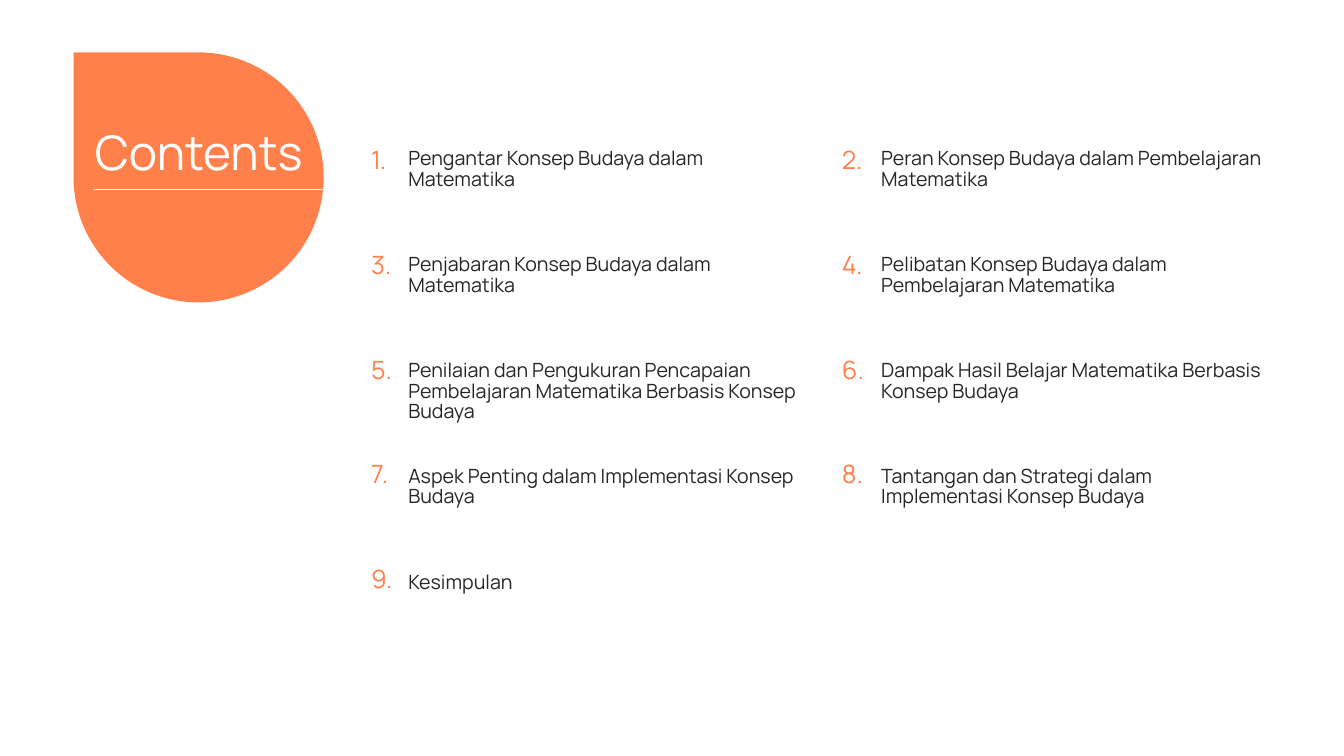
"""Build the contents slide with its nine numbered topics in two columns."""
import dataclasses

import lxml.etree
import pptx
import pptx.dml.color
import pptx.enum.shapes
import pptx.enum.text
import pptx.oxml.ns
import pptx.util

Inches = pptx.util.Inches


@dataclasses.dataclass
class Theme:
    face: str = "Manrope"
    accent: str = "FF804B"
    dark: str = "262626"
    light: str = "FFFFFF"
    title: int = 34
    number: int = 18
    topic: int = 14
    leading: float = 0.88


class Page:
    def __init__(self, slide, theme):
        self.slide = slide
        self.theme = theme

    def color(self, name):
        return pptx.dml.color.RGBColor.from_string(getattr(self.theme, name))

    def place(self, shape, box):
        for key, value in zip(("left", "top", "width", "height"), box):
            setattr(shape, key, Inches(value))

    def label(self, shape, text, size, color, anchor="TOP"):
        frame = shape.text_frame
        frame.text = text
        para = frame.paragraphs[0]
        formats = (
            (frame, {
                "word_wrap": True,
                "auto_size": pptx.enum.text.MSO_AUTO_SIZE.NONE,
                "vertical_anchor": getattr(pptx.enum.text.MSO_ANCHOR, anchor),
                "margin_left": 0, "margin_top": 0,
                "margin_right": 0, "margin_bottom": 0,
            }),
            (para, {
                "alignment": pptx.enum.text.PP_ALIGN.LEFT,
                "line_spacing": self.theme.leading,
            }),
            (para.runs[0].font, {
                "name": self.theme.face,
                "size": pptx.util.Pt(getattr(self.theme, size)),
            }),
        )
        for target, values in formats:
            for key, value in values.items():
                setattr(target, key, value)
        para.runs[0].font.color.rgb = self.color(color)

    def title(self, text, box):
        shape = self.slide.shapes.title
        self.place(shape, box)
        self.label(shape, text, "title", "light", "MIDDLE")
        shape.element.getparent().append(shape.element)

    def text(self, text, box, size, color):
        shape = self.slide.shapes.add_textbox(*map(Inches, box))
        self.label(shape, text, size, color)

    def drop(self, box, turn):
        kind = pptx.enum.shapes.MSO_SHAPE.TEAR
        shape = self.slide.shapes.add_shape(kind, *map(Inches, box))
        shape.rotation = turn
        shape.shadow.inherit = False
        shape.fill.solid()
        shape.fill.fore_color.rgb = self.color("accent")
        shape.line.fill.background()

    def line(self, ends):
        kind = pptx.enum.shapes.MSO_CONNECTOR.STRAIGHT
        rule = self.slide.shapes.add_connector(kind, *map(Inches, ends))
        rule.line.color.rgb = self.color("light")
        rule.line.width = pptx.util.Pt(1)
        props = rule.element.find(pptx.oxml.ns.qn("p:spPr"))
        lxml.etree.SubElement(props, pptx.oxml.ns.qn("a:effectLst"))


TOPICS = (
    "Pengantar Konsep Budaya dalam Matematika",
    "Peran Konsep Budaya dalam Pembelajaran Matematika",
    "Penjabaran Konsep Budaya dalam Matematika",
    "Pelibatan Konsep Budaya dalam Pembelajaran Matematika",
    "Penilaian dan Pengukuran Pencapaian Pembelajaran Matematika Berbasis Konsep Budaya",
    "Dampak Hasil Belajar Matematika Berbasis Konsep Budaya",
    "Aspek Penting dalam Implementasi Konsep Budaya",
    "Tantangan dan Strategi dalam Implementasi Konsep Budaya",
    "Kesimpulan",
)
COLUMNS = ((3.68, 4.05), (8.35, 8.74))


def main():
    deck = pptx.Presentation()
    deck.slide_width, deck.slide_height = Inches(13.33), Inches(7.5)
    page = Page(deck.slides.add_slide(deck.slide_layouts[5]), Theme())
    page.drop((0.73, 0.52, 2.48, 2.48), 270)
    page.line((3.4, 1.88, 0.92, 1.88))
    page.title("Contents", (0.94, 1.24, 2.55, 0.61))
    for index, topic in enumerate(TOPICS):
        row, column = divmod(index, len(COLUMNS))
        mark, start = COLUMNS[column]
        page.text(f"{index + 1}.", (mark, 1.47 + 1.04 * row, 0.39, 0.31),
                  "number", "accent")
        page.text(topic, (start, 1.48 + 1.05 * row, 3.86, 0.94),
                  "topic", "dark")
    deck.save("out.pptx")


if __name__ == "__main__":
    main()
